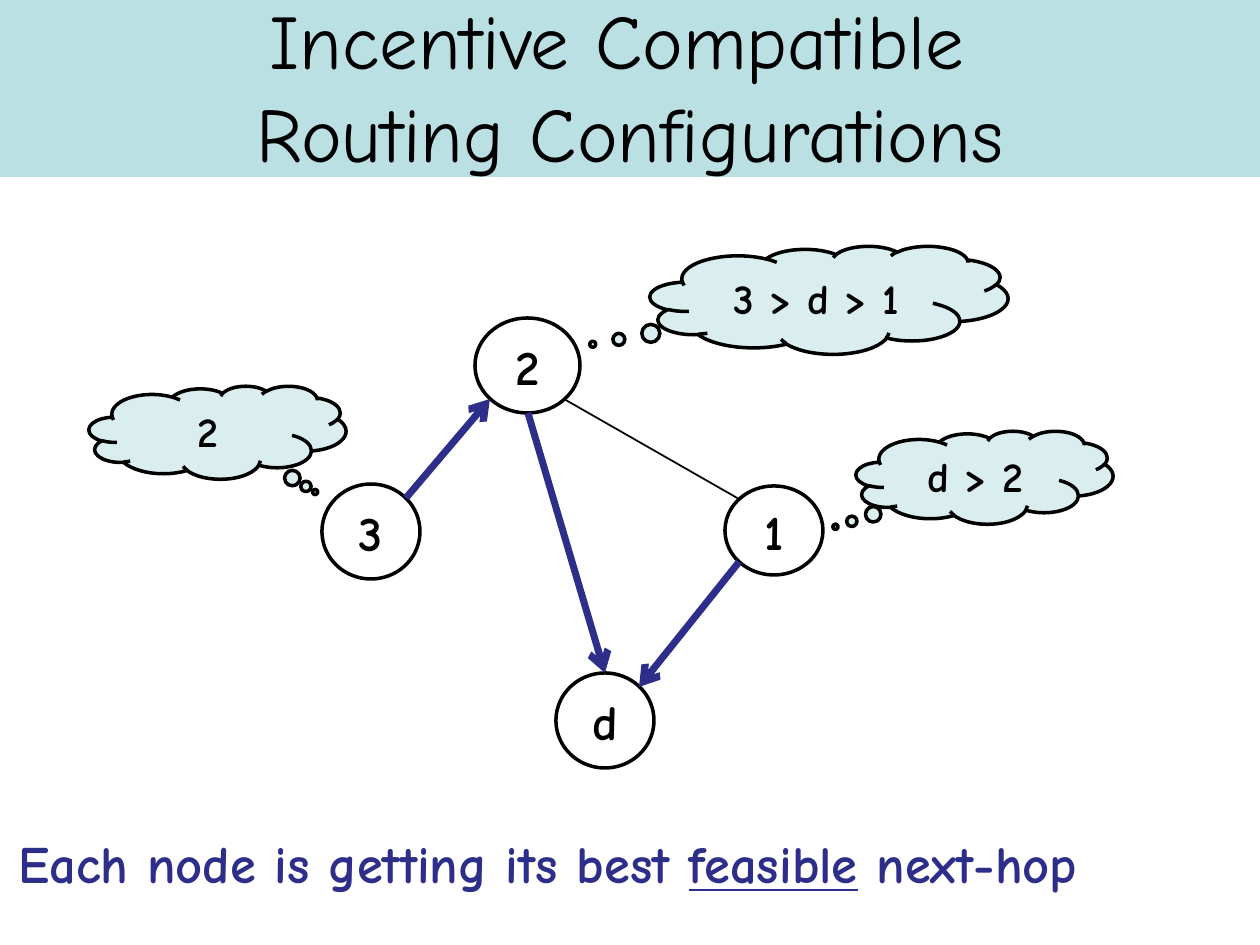
from lxml.etree import SubElement
from pptx import Presentation
from pptx.dml.color import RGBColor
from pptx.enum.shapes import MSO_CONNECTOR, MSO_SHAPE
from pptx.enum.text import MSO_ANCHOR, PP_ALIGN
from pptx.oxml.ns import qn
from pptx.util import Pt

PX = 914400 // 126
FONT = "Comic Neue"
BLACK = RGBColor(0x00, 0x00, 0x00)
WHITE = RGBColor(0xFF, 0xFF, 0xFF)
BANNER = RGBColor(0xBB, 0xE0, 0xE3)
CLOUD = RGBColor(0xDA, 0xED, 0xEF)
NAVY = RGBColor(0x2D, 0x2D, 0x8A)


def write(shape, text, size, color=BLACK, bold=True, align=PP_ALIGN.CENTER,
          anchor=MSO_ANCHOR.MIDDLE, wrap=False, underlined=None):
    """Fill the shape with one paragraph, underlining one word if asked."""
    frame = shape.text_frame
    frame.word_wrap = wrap
    frame.vertical_anchor = anchor
    paragraph = frame.paragraphs[0]
    paragraph.alignment = align
    before, word, after = text.partition(underlined) if underlined else (text, "", "")
    for part in filter(None, (before, word, after)):
        for number, line in enumerate(part.split("\n")):
            if number:
                paragraph.add_line_break()
            run = paragraph.add_run()
            run.text = line
            font = run.font
            font.name, font.size, font.bold = FONT, Pt(size), bold
            font.color.rgb = color
            if part == underlined:
                font.underline = True


def connect(start, end, color, width, arrow=False):
    line = slide.shapes.add_connector(
        MSO_CONNECTOR.STRAIGHT, *(value * PX for value in start + end))
    line.line.color.rgb = color
    line.line.width = Pt(width)
    if arrow:
        SubElement(line.line._get_or_add_ln(), qn("a:tailEnd"), type="arrow")
    SubElement(line._element.spPr, qn("a:effectLst"))


presentation = Presentation()
presentation.slide_width = 1260 * PX
presentation.slide_height = 945 * PX
slide = presentation.slides.add_slide(presentation.slide_layouts[6])

# Title banner
banner = slide.shapes.add_shape(MSO_SHAPE.RECTANGLE, 0, 0, 1260 * PX, 177 * PX)
banner.shadow.inherit = False
banner.fill.solid()
banner.fill.fore_color.rgb = BANNER
banner.line.fill.background()
title = slide.shapes.add_textbox(0, 6 * PX, 1260 * PX, 158 * PX)
write(title, "Incentive Compatible \nRouting Configurations", 44, bold=False, wrap=True)

# Network nodes and the preferences they think of
CIRCLE, THOUGHT = MSO_SHAPE.OVAL, MSO_SHAPE.CLOUD_CALLOUT
bubbles = [
    (CIRCLE, "2", 475, 318, 105, 95, ()),
    (CIRCLE, "d", 556, 673, 98, 95, ()),
    (CIRCLE, "3", 322, 484, 98, 95, ()),
    (CIRCLE, "1", 725, 486, 98, 89, ()),
    (THOUGHT, "d > 2", 856, 431, 257, 93, (-0.58, 0.53)),
    (THOUGHT, "3 > d > 1", 650, 246, 358, 108, (-0.66, 0.41)),
    (THOUGHT, "2", 89, 386, 257, 93, (0.38, 0.64)),
]
for kind, text, left, top, width, height, pointer in bubbles:
    bubble = slide.shapes.add_shape(
        kind, left * PX, top * PX, width * PX, height * PX)
    for index, value in enumerate(pointer):
        bubble.adjustments[index] = value
    bubble.shadow.inherit = False
    bubble.fill.solid()
    bubble.fill.fore_color.rgb = WHITE if kind == CIRCLE else CLOUD
    bubble.line.color.rgb = BLACK
    bubble.line.width = Pt(2)
    write(bubble, text, 28 if kind == CIRCLE else 24)

# Links, then the chosen routes on top of them
routes = [
    ((739, 562), (639, 687)),
    ((528, 413), (605, 673)),
    ((406, 498), (490, 399)),
]
for start, end in routes + [((739, 499), (564, 399))]:
    connect(start, end, BLACK, 1)
for start, end in routes:
    connect(start, end, NAVY, 4, arrow=True)

conclusion = slide.shapes.add_textbox(6 * PX, 825 * PX, 1254 * PX, 77 * PX)
write(conclusion, "Each node is getting its best feasible next-hop", 30, NAVY,
      align=PP_ALIGN.LEFT, anchor=MSO_ANCHOR.TOP, wrap=True, underlined="feasible")

presentation.save("out.pptx")
